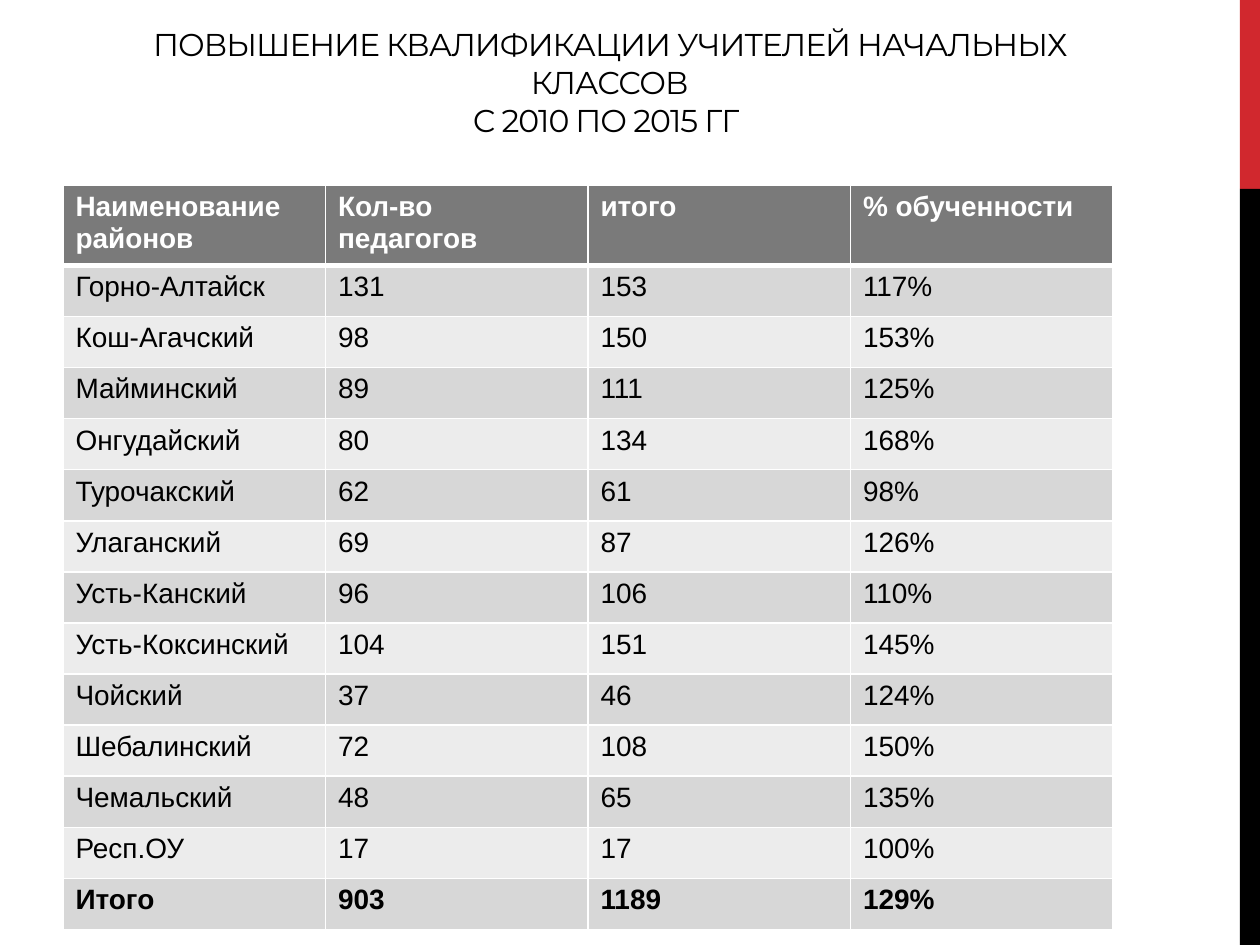
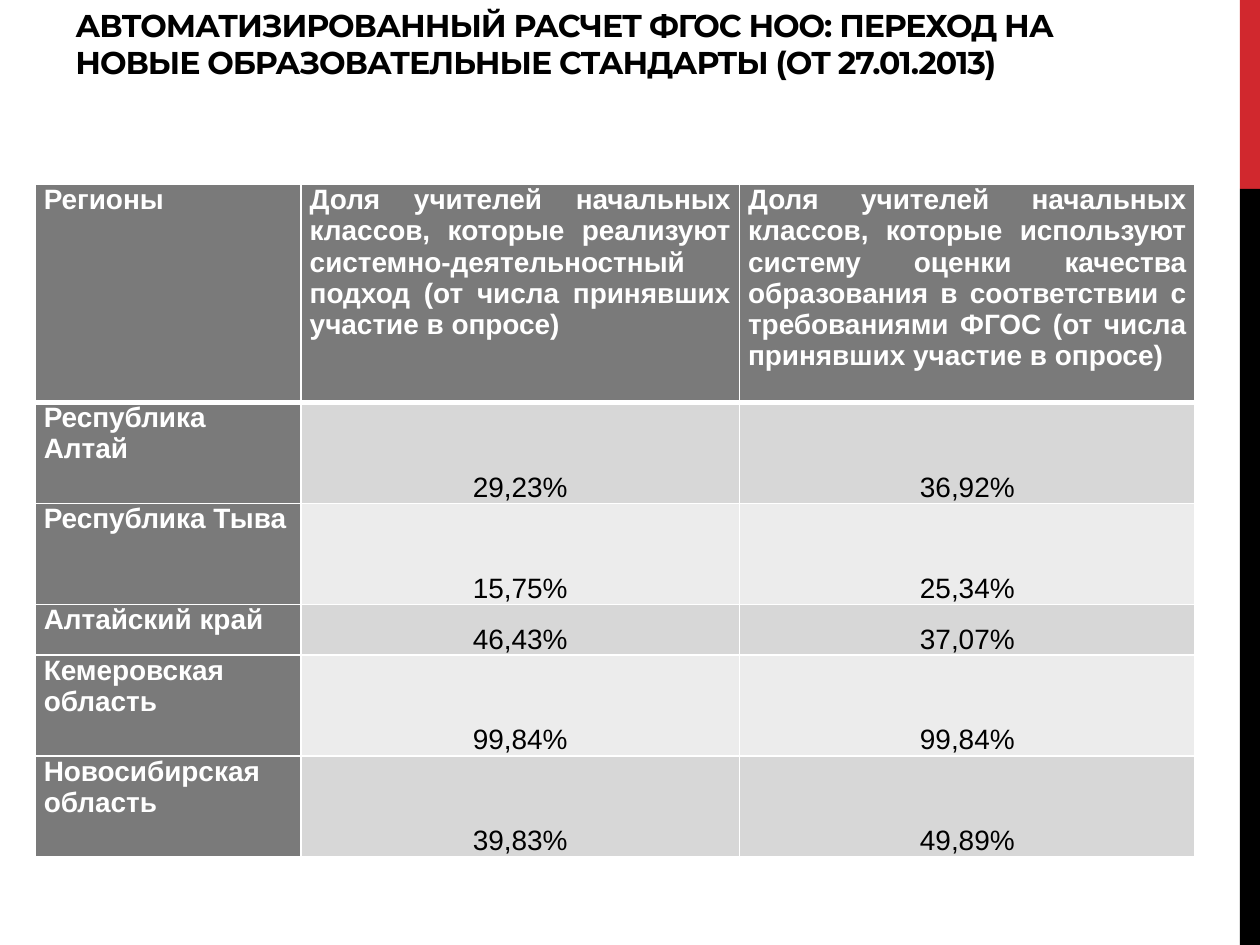
from lxml.etree import SubElement as Sub
from pptx import Presentation
from pptx.dml.color import RGBColor
from pptx.enum.shapes import MSO_SHAPE as Shape
from pptx.enum.text import MSO_ANCHOR as Anchor, PP_ALIGN as Align
from pptx.oxml.ns import qn
from pptx.util import Pt

RED, BLACK, WHITE = "D1282E", "000000", "FFFFFF"
HEAD, BANDS = "7A7A7A", ("D7D7D7", "ECECEC")
TITLE = {"name": "Montserrat", "size": Pt(18)}
BODY = {"name": "Arial", "size": Pt(16)}
INSETS = {"margin_left": Pt(5), "margin_right": Pt(5),
          "margin_top": 0, "margin_bottom": 0}

STAFF = [
    ("Наименование районов", "Кол-во педагогов", "итого", "% обученности"),
    ("Горно-Алтайск", "131", "153", "117%"),
    ("Кош-Агачский", "98", "150", "153%"),
    ("Майминский", "89", "111", "125%"),
    ("Онгудайский", "80", "134", "168%"),
    ("Турочакский", "62", "61", "98%"),
    ("Улаганский", "69", "87", "126%"),
    ("Усть-Канский", "96", "106", "110%"),
    ("Усть-Коксинский", "104", "151", "145%"),
    ("Чойский", "37", "46", "124%"),
    ("Шебалинский", "72", "108", "150%"),
    ("Чемальский", "48", "65", "135%"),
    ("Респ.ОУ", "17", "17", "100%"),
    ("Итого", "903", "1189", "129%"),
]
SHARES = [
    ("Регионы",
     "Доля учителей начальных классов, которые реализуют "
     "системно-деятельностный подход (от числа принявших участие в опросе)",
     "Доля учителей начальных классов, которые используют систему оценки "
     "качества образования в соответствии с требованиями ФГОС "
     "(от числа принявших участие в опросе)"),
    ("Республика Алтай", "29,23%", "36,92%"),
    ("Республика Тыва", "15,75%", "25,34%"),
    ("Алтайский край", "46,43%", "37,07%"),
    ("Кемеровская область", "99,84%", "99,84%"),
    ("Новосибирская область", "39,83%", "49,89%"),
]


def rgb(code):
    return RGBColor.from_string(code)


def apply(item, looks):
    for name, value in looks.items():
        setattr(item, name, value)


def style(frame, looks, color, bold, align):
    for para in frame.paragraphs:
        para.alignment = align
        for run in para.runs:
            apply(run.font, looks)
            run.font.bold = bold
            run.font.color.rgb = rgb(color)


def add_bars(slide, left, width):
    for top, height, color in ((0, 108, RED), (108, 432, BLACK)):
        bar = slide.shapes.add_shape(
            Shape.RECTANGLE, Pt(left), Pt(top), Pt(width), Pt(height))
        bar.shadow.inherit = False
        bar.fill.solid()
        bar.fill.fore_color.rgb = rgb(color)
        bar.line.fill.background()


def add_title(slide, box, text, bold, align):
    frame = slide.shapes.add_textbox(*map(Pt, box)).text_frame
    apply(frame, {"word_wrap": True, "vertical_anchor": Anchor.BOTTOM})
    frame.text = text
    style(frame, TITLE, BLACK, bold, align)
    for run in frame.paragraphs[0].runs:
        run.font._element.set("spc", "-60")


def add_edges(cell, row):
    """White cell borders, thicker between the header and the body."""
    props = cell._tc.get_or_add_tcPr()
    widths = {"L": 1, "R": 1, "T": 3 if row == 1 else 1, "B": 1 if row else 3}
    for side, width in widths.items():
        line = Sub(props, qn(f"a:ln{side}"), w=str(Pt(width)))
        Sub(Sub(line, qn("a:solidFill")), qn("a:srgbClr"), val=WHITE)


def add_grid(slide, left, top, cols, rows, data, look):
    """Table whose cell format comes from look(row, col)."""
    grid = slide.shapes.add_table(
        len(rows), len(cols), Pt(left), Pt(top), Pt(sum(cols)), Pt(sum(rows))).table
    for col, width in zip(grid.columns, cols):
        col.width = Pt(width)
    for row, height in zip(grid.rows, rows):
        row.height = Pt(height)
    for r, texts in enumerate(data):
        for c, text in enumerate(texts):
            head, bold, align, frame = look(r, c)
            cell = grid.cell(r, c)
            cell.text = text
            apply(cell, frame)
            add_edges(cell, r)
            cell.fill.solid()
            cell.fill.fore_color.rgb = rgb(HEAD if head else BANDS[(r - 1) % 2])
            style(cell.text_frame, BODY, WHITE if head else BLACK, bold, align)


def staff_look(row, col):
    return row == 0, row in (0, len(STAFF) - 1), Align.LEFT, {}


def share_look(row, col):
    head = row == 0 or col == 0
    anchor = Anchor.TOP if head else Anchor.BOTTOM
    align = Align.JUSTIFY if head else Align.CENTER
    return head, head, align, {**INSETS, "vertical_anchor": anchor}


def new_slide(deck):
    slide = deck.slides.add_slide(deck.slide_layouts[6])
    add_bars(slide, 708.5, 11.5)
    return slide


def staff_slide(deck):
    slide = new_slide(deck)
    add_title(slide, (76.3, 9.4, 544.3, 73.4),
              "ПОВЫШЕНИЕ КВАЛИФИКАЦИИ УЧИТЕЛЕЙ НАЧАЛЬНЫХ КЛАССОВ\v"
              "С 2010 ПО 2015 ГГ ", False, Align.CENTER)
    add_grid(slide, 36, 106, [150] * 4, [42] + [29.2] * 13, STAFF, staff_look)


def share_slide(deck):
    slide = new_slide(deck)
    add_title(slide, (36, 0, 636, 50),
              "АВТОМАТИЗИРОВАННЫЙ РАСЧЕТ ФГОС НОО: ПЕРЕХОД НА НОВЫЕ "
              "ОБРАЗОВАТЕЛЬНЫЕ СТАНДАРТЫ (ОТ 27.01.2013)", True, Align.LEFT)
    tall, low = 57.7, 28.9
    add_grid(slide, 20, 105.5, [152, 250.5, 260.5],
             [124.5, tall, tall, low, tall, tall], SHARES, share_look)


def main():
    deck = Presentation()
    apply(deck, {"slide_width": Pt(720), "slide_height": Pt(540)})
    staff_slide(deck)
    share_slide(deck)
    deck.save("out.pptx")


if __name__ == "__main__":
    main()
